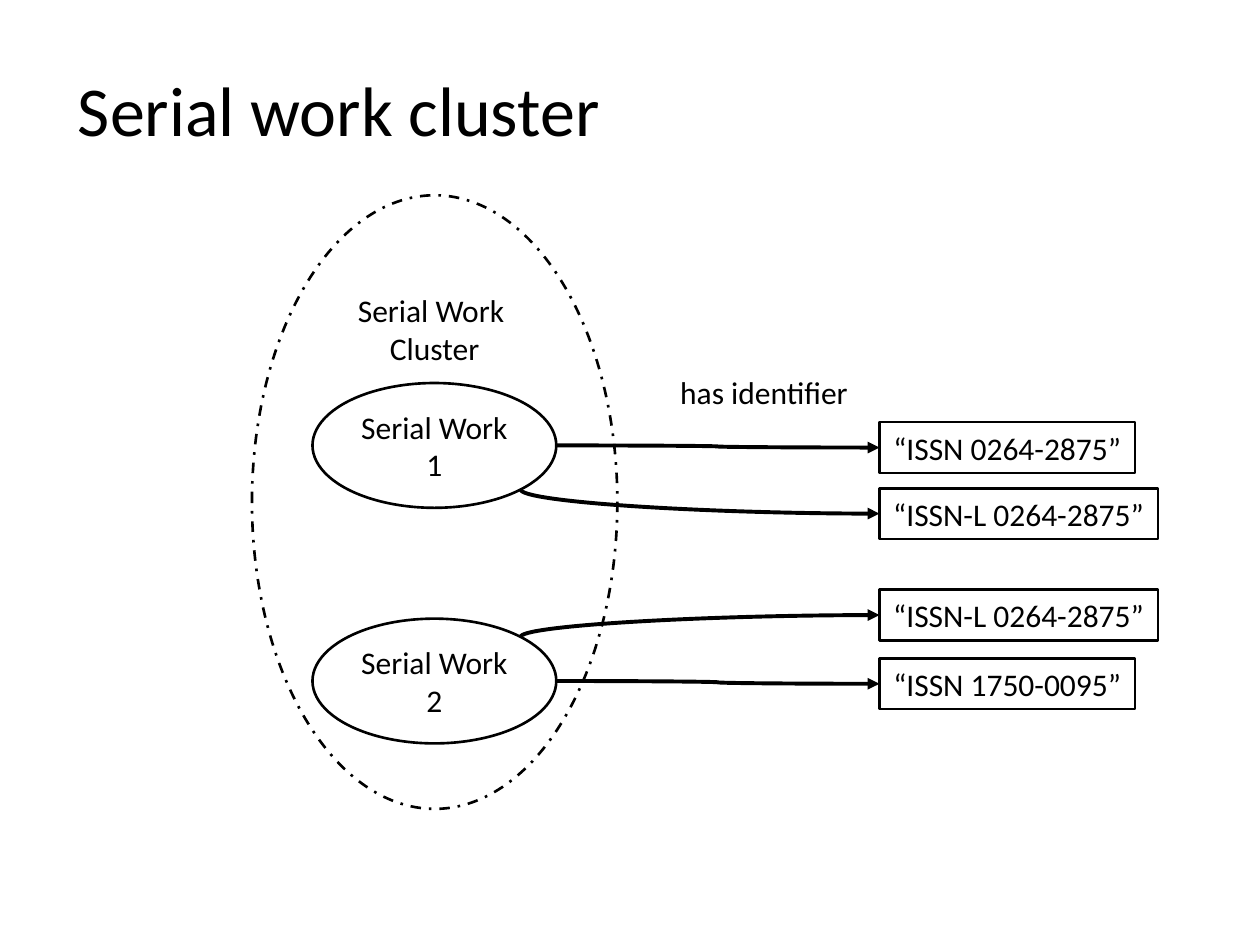
"""Build a slide relating two serial works of one cluster to their identifiers."""
from dataclasses import dataclass
from math import cos, pi

from lxml.etree import SubElement
from pptx import Presentation
from pptx.dml.color import RGBColor
from pptx.enum.dml import MSO_LINE
from pptx.enum.shapes import MSO_CONNECTOR, MSO_SHAPE
from pptx.enum.text import MSO_ANCHOR, PP_ALIGN
from pptx.oxml.ns import qn
from pptx.util import Inches, Pt

BLACK = RGBColor(0x00, 0x00, 0x00)
FONT = "Calibri"
CELL = Inches(0.1)
DIAGONAL = cos(pi / 4)
WORK_LEFT, WORK_WIDTH, WORK_HEIGHT = 24.8, 19.35, 9.9
LABEL_LEFT, LABEL_HEIGHT = 69.8, 4.04


@dataclass(frozen=True)
class Area:
    column: float
    row: float
    columns: float
    rows: float

    @property
    def middle(self) -> float:
        return self.row + self.rows / 2

    def lengths(self) -> list[int]:
        return [grid(n) for n in (self.column, self.row, self.columns, self.rows)]


@dataclass(frozen=True)
class Identifier:
    text: str
    row: float
    columns: float
    bend: int


@dataclass(frozen=True)
class Work:
    number: int
    row: float
    identifiers: tuple[Identifier, ...]


WORKS = (
    Work(1, 30.4, (Identifier("“ISSN 0264-2875”", 33.5, 20.3, 0),
                   Identifier("“ISSN-L 0264-2875”", 38.75, 22.1, 1))),
    Work(2, 49.1, (Identifier("“ISSN-L 0264-2875”", 46.8, 22.1, -1),
                   Identifier("“ISSN 1750-0095”", 52.25, 20.3, 0))),
)


def grid(cells: float) -> int:
    return round(cells * CELL)


def write(shape, text: str, size: int, align: PP_ALIGN, anchor: MSO_ANCHOR) -> None:
    frame = shape.text_frame
    frame.text = text
    frame.word_wrap = False
    frame.vertical_anchor = anchor
    for para in frame.paragraphs:
        para.alignment = align
        for span in para.runs:
            span.font.name = FONT
            span.font.size = Pt(size)
            span.font.color.rgb = BLACK


def add_caption(page, area: Area, text: str, size: int) -> None:
    box = page.shapes.add_textbox(*area.lengths())
    write(box, text, size, PP_ALIGN.LEFT, MSO_ANCHOR.TOP)


def add_outline(page, kind: MSO_SHAPE, area: Area, text: str,
                anchor: MSO_ANCHOR = MSO_ANCHOR.MIDDLE):
    shape = page.shapes.add_shape(kind, *area.lengths())
    shape.shadow.inherit = False
    shape.fill.background()
    shape.line.color.rgb = BLACK
    shape.line.width = Pt(1.5)
    write(shape, text, 18, PP_ALIGN.CENTER, anchor)
    return shape


def add_arrow(page, work: Area, label: Area, bend: int) -> None:
    reach = DIAGONAL if bend else 1
    start_x = work.column + work.columns / 2 * (1 + reach)
    start_y = work.middle + bend * DIAGONAL * work.rows / 2
    end_x, end_y = label.column, label.middle
    ends = (start_x, start_y, end_x, end_y)
    if bend:
        center_x, center_y = (start_x + end_x) / 2, (start_y + end_y) / 2
        half_width = abs(end_y - start_y) / 2
        half_height = bend * (end_x - start_x) / 2
        ends = (center_x + half_width, center_y - half_height,
                center_x - half_width, center_y + half_height)
    arrow = page.shapes.add_connector(MSO_CONNECTOR.CURVE, *map(grid, ends))
    arrow.line.color.rgb = BLACK
    arrow.line.width = Pt(2.25)
    properties = arrow._element.spPr
    if bend:
        properties.find(qn("a:prstGeom")).set("prst", "curvedConnector2")
        turn = 270 if bend > 0 else 90
        properties.find(qn("a:xfrm")).set("rot", str(turn * 60000))
    SubElement(properties.find(qn("a:ln")), qn("a:tailEnd"), type="triangle")
    SubElement(properties, qn("a:effectLst"))


def add_work(page, work: Work) -> None:
    area = Area(WORK_LEFT, work.row, WORK_WIDTH, WORK_HEIGHT)
    add_outline(page, MSO_SHAPE.OVAL, area, f"Serial Work\n{work.number}")
    for item in work.identifiers:
        label = Area(LABEL_LEFT, item.row, item.columns, LABEL_HEIGHT)
        add_arrow(page, area, label, item.bend)
        add_outline(page, MSO_SHAPE.RECTANGLE, label, item.text)


def main() -> None:
    deck = Presentation()
    deck.slide_width, deck.slide_height = grid(100), grid(75)
    page = deck.slides.add_slide(deck.slide_layouts[6])
    cluster = add_outline(page, MSO_SHAPE.OVAL, Area(20, 15.5, 29, 48.7),
                          "Serial Work \nCluster", MSO_ANCHOR.TOP)
    cluster.line.dash_style = MSO_LINE.DASH_DOT
    for work in WORKS:
        add_work(page, work)
    add_caption(page, Area(53, 29.1, 15.5, LABEL_HEIGHT), "has identifier", 18)
    add_caption(page, Area(5.2, 4.8, 43.8, 7.7), "Serial work cluster", 40)
    deck.save("out.pptx")


if __name__ == "__main__":
    main()
